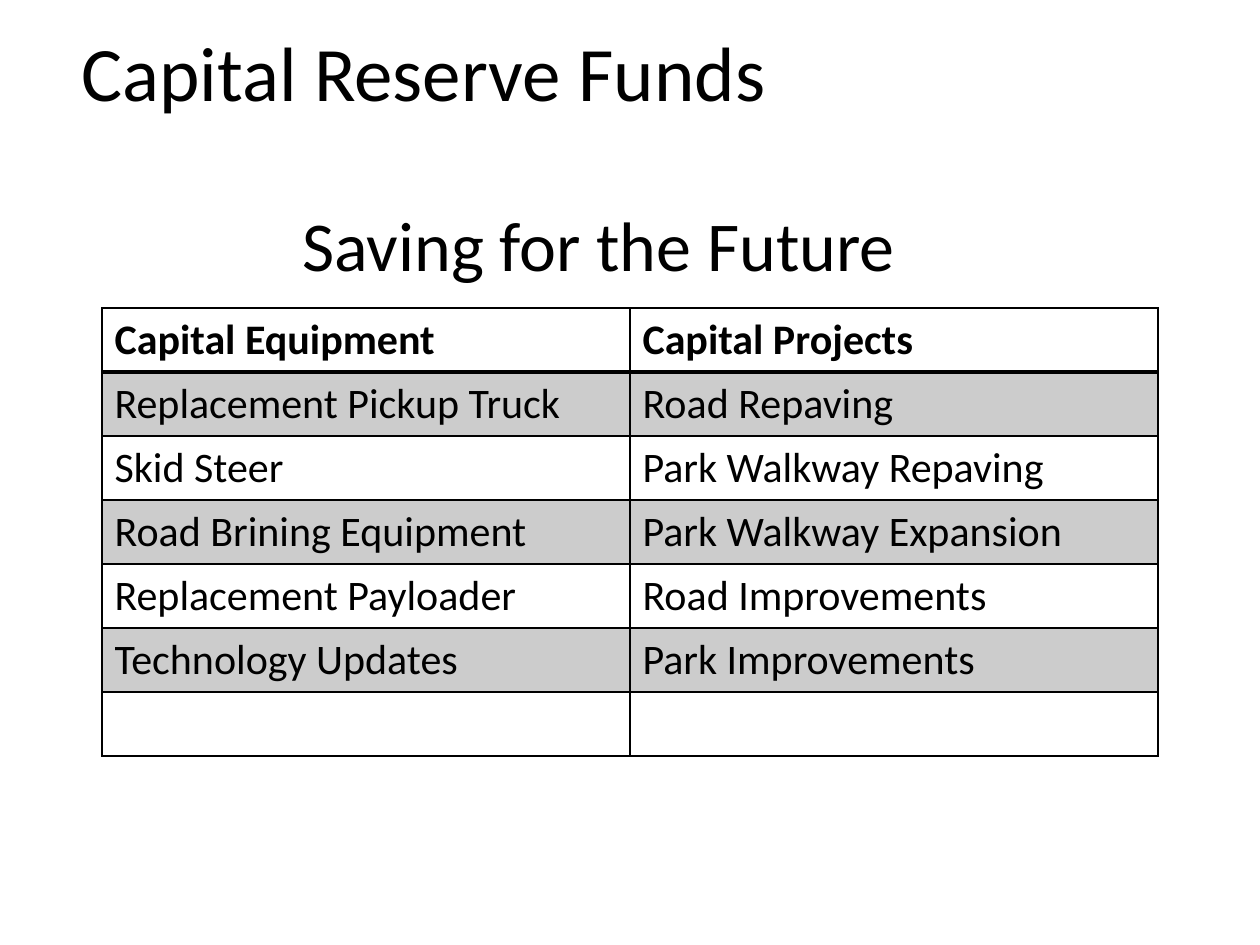
from lxml.etree import SubElement
from pptx import Presentation
from pptx.dml.color import RGBColor
from pptx.enum.text import MSO_ANCHOR as Anchor, PP_ALIGN as Align
from pptx.oxml.ns import qn
from pptx.util import Pt

SCALE = 914400 / 126
COLORS = {"ink": "000000"}
ROWS = [
    ("Capital Equipment", "Capital Projects"),
    ("Replacement Pickup Truck", "Road Repaving"),
    ("Skid Steer", "Park Walkway Repaving"),
    ("Road Brining Equipment", "Park Walkway Expansion"),
    ("Replacement Payloader", "Road Improvements"),
    ("Technology Updates", "Park Improvements"),
    ("", ""),
]


def px(*lengths):
    return [round(length * SCALE) for length in lengths]


def write(frame, text, font="Calibri", size=24, bold=False, color="ink",
          align=Align.LEFT, spacing=1.0):
    para = frame.paragraphs[0]
    para.alignment = align
    para.line_spacing = spacing
    target = para
    if text:
        target = para.add_run()
        target.text = text
    target.font.name = font
    target.font.size = Pt(size)
    target.font.bold = bold
    target.font.color.rgb = RGBColor.from_string(COLORS[color])


class SlideBuilder:
    """Draw styled text and tables on the current slide."""

    def __init__(self, page, line="ink", band="ink", band_alpha=20):
        self.page = page
        self.line = COLORS[line]
        self.band = COLORS[band]
        self.band_alpha = band_alpha

    def text(self, place, text, anchor=Anchor.TOP, **style):
        box = self.page.shapes.add_textbox(*px(*place))
        box.text_frame.word_wrap = True
        box.text_frame.vertical_anchor = anchor
        write(box.text_frame, text, **style)

    def border(self, cell, side, width):
        properties = cell._tc.get_or_add_tcPr()
        edge = SubElement(properties, qn(f"a:ln{side}"), w=str(Pt(width)))
        fill = SubElement(edge, qn("a:solidFill"))
        SubElement(fill, qn("a:srgbClr"), val=self.line)

    def shade(self, cell):
        cell.fill.solid()
        cell.fill.fore_color.rgb = RGBColor.from_string(self.band)
        color = cell._tc.tcPr.find(f".//{qn('a:solidFill')}[last()]")
        color = cell._tc.tcPr.find(f"{qn('a:solidFill')}/{qn('a:srgbClr')}")
        SubElement(color, qn("a:alpha"), val=str(self.band_alpha * 1000))

    def table(self, left, top, column_width, row_height, rows):
        columns = len(rows[0])
        place = px(left, top, column_width * columns, row_height * len(rows))
        table = self.page.shapes.add_table(len(rows), columns, *place).table
        table.horz_banding = False
        for row_index, values in enumerate(rows):
            table.rows[row_index].height = px(row_height)[0]
            for column, value in enumerate(values):
                cell = table.cell(row_index, column)
                write(cell.text_frame, value, bold=row_index == 0)
                for side in "LRTB":
                    header_edge = (row_index, side) in ((0, "B"), (1, "T"))
                    self.border(cell, side, 2 if header_edge else 1)
                if row_index % 2:
                    self.shade(cell)
                else:
                    cell.fill.background()


def main():
    deck = Presentation()
    deck.slide_width, deck.slide_height = px(1260, 945)
    builder = SlideBuilder(deck.slides.add_slide(deck.slide_layouts[6]))
    builder.text((69, 18, 1086, 117), "Capital Reserve Funds",
                 anchor=Anchor.MIDDLE, size=44, spacing=0.9)
    builder.table(102, 308, 528, 64, ROWS)
    builder.text((194, 195, 809, 97), "Saving for the Future",
                 size=40, align=Align.CENTER)
    deck.save("out.pptx")


if __name__ == "__main__":
    main()
